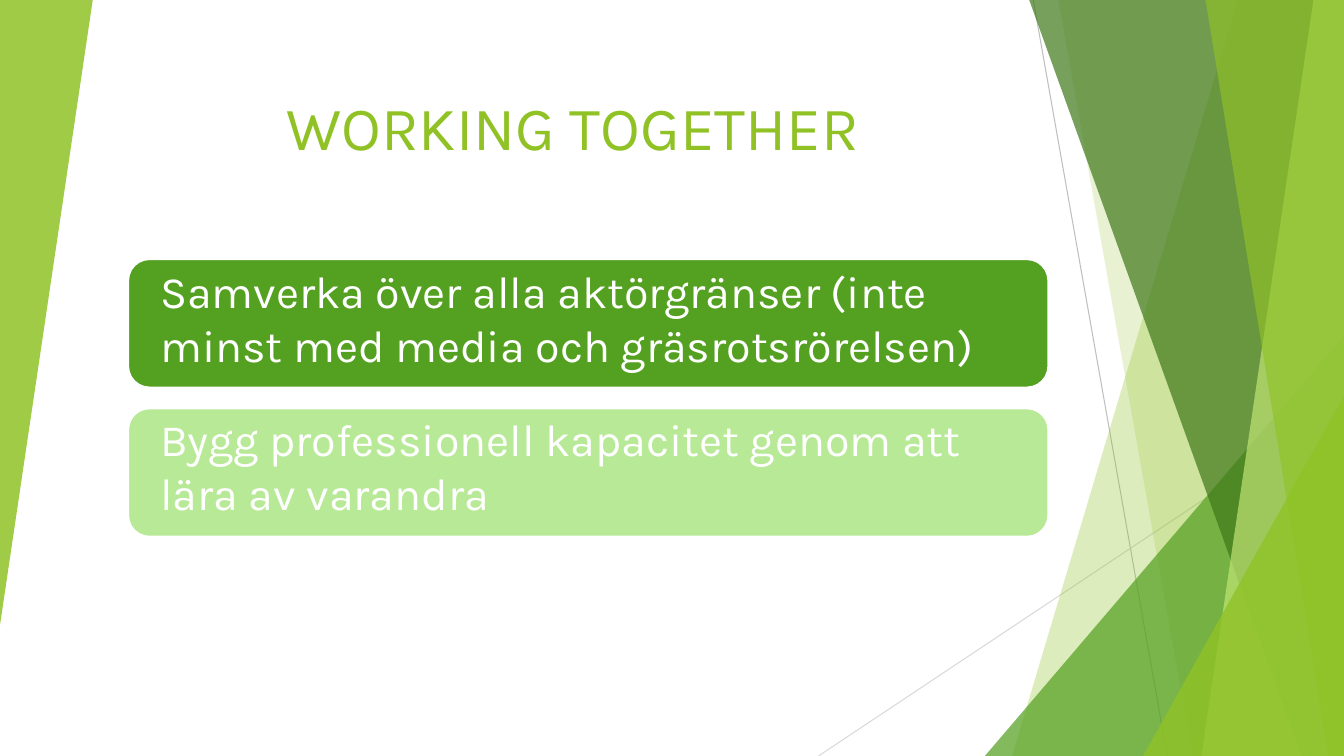
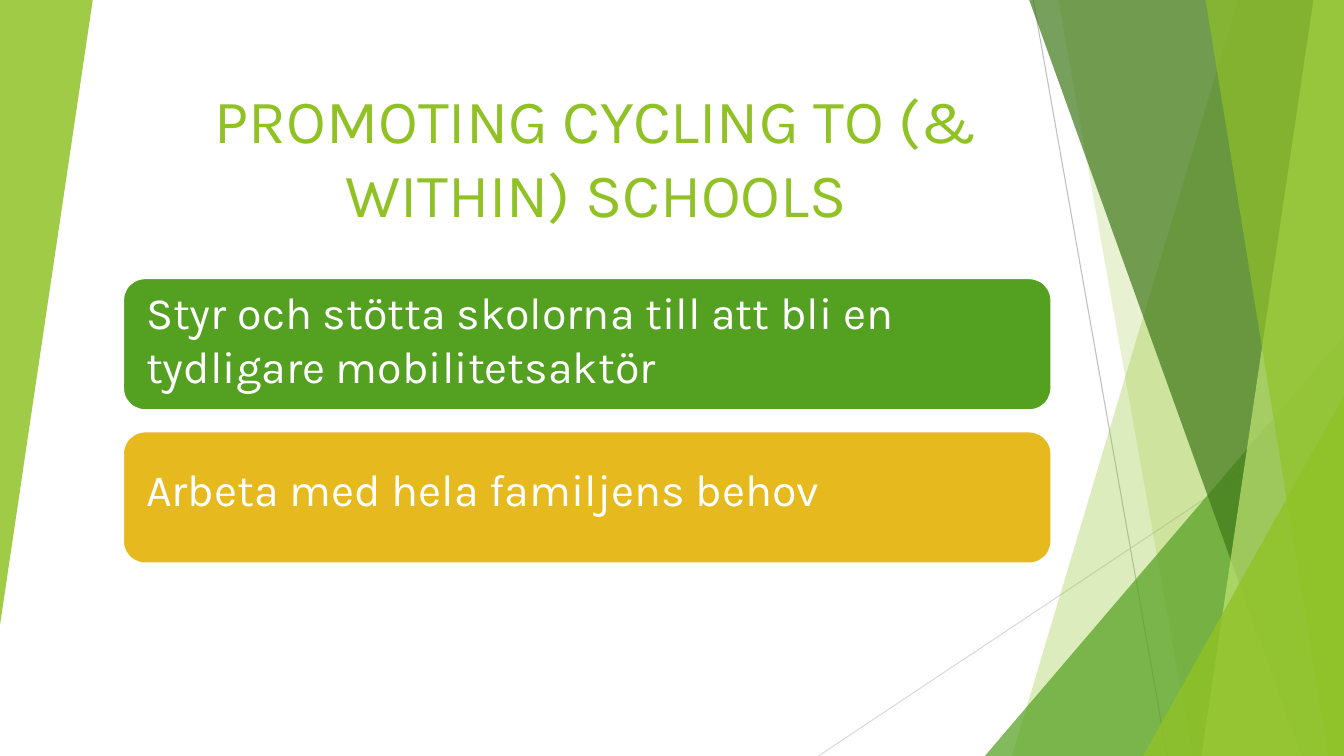
import dataclasses
import typing

import pptx
import pptx.dml.color
import pptx.enum.shapes
import pptx.enum.text
import pptx.oxml.ns
import pptx.oxml.xmlchemy
import pptx.util

SHAPE = pptx.enum.shapes.MSO_SHAPE
ANCHOR = pptx.enum.text.MSO_ANCHOR
ALIGN = pptx.enum.text.PP_ALIGN
WIDE = pptx.util.Inches(13.333)
HIGH = pptx.util.Inches(7.5)


@dataclasses.dataclass(frozen=True)
class Theme:
    font: str = "Karla"
    head: int = 44
    body: int = 32
    edge: float = 1.5
    hair: float = 0.75
    white: str = "FFFFFF"
    lime: str = "90C226"
    green: str = "54A021"
    dark: str = "3F7819"
    pale: str = "C0E474"
    mint: str = "B7E996"
    gold: str = "E6B91E"
    gray: str = "BFBFBF"
    mist: str = "D9D9D9"


THEME = Theme()


# Every length below is a percentage of the slide's width or height.
class Box(typing.NamedTuple):
    left: float
    top: float
    width: float
    height: float


class Ray(typing.NamedTuple):
    start: tuple[float, float]
    end: tuple[float, float]
    color: str


class Band(typing.NamedTuple):
    """Slanted left edge, filled out to the right side of the slide."""
    top: float
    foot: float
    color: str
    alpha: int


class Wedge(typing.NamedTuple):
    box: Box
    color: str
    alpha: int
    turn: int = 0


class Card(typing.NamedTuple):
    text: str
    color: str
    text_top: float


@dataclasses.dataclass(frozen=True)
class Page:
    title: str
    title_at: tuple[float, float]
    first: Box
    step: float
    text_left: float
    cards: tuple[Card, ...]


def corner(left: float, top: float) -> Box:
    """Box that reaches the lower right corner of the slide."""
    return Box(left, top, 100 - left, 100 - top)


TEXT_WIDTH = 63.68
TITLE_HIGH = 24
CARD_HIGH = 16

RAYS = (
    Ray((76.88, 0), (86.85, 100), THEME.gray),
    Ray((100, 53.73), (60.9, 100), THEME.mist),
)
FACETS = (
    Band(92.1, 75.3, THEME.lime, 30),
    Band(78.75, 88.73, THEME.lime, 20),
    Wedge(corner(73.28, 44.4), THEME.green, 72),
    Band(76.58, 96.83, THEME.dark, 70),
    Band(97.73, 89.4, THEME.pale, 70),
    Band(89.7, 98.85, THEME.lime, 65),
    Wedge(corner(85.05, 52.4), THEME.lime, 80),
    Wedge(Box(0, 0, 6.9, 82.67), THEME.lime, 85, turn=180),
)
PAGES = (
    Page(
        "WORKING TOGETHER", (10.8, -1.87),
        Box(9.53, 34.27, 68.48, 17), 19.73, 11.18,
        (
            Card("Samverka över alla aktörgränser (inte minst med media "
                 "och gräsrotsrörelsen)", THEME.green, 34.27),
            Card("Bygg professionell kapacitet genom att lära av varandra",
                 THEME.mint, 53.87),
        ),
    ),
    Page(
        "PROMOTING CYCLING TO (& WITHIN) SCHOOLS", (12.53, 7.07),
        Box(9.15, 36.8, 69.08, 17.47), 20.27, 10.13,
        (
            Card("Styr och stötta skolorna till att bli en tydligare "
                 "mobilitetsaktör", THEME.green, 37.07),
            Card("Arbeta med hela familjens behov", THEME.gold, 60.4),
        ),
    ),
)


def across(share: float) -> int:
    return round(WIDE * share / 100)


def down(share: float) -> int:
    return round(HIGH * share / 100)


def place(box: Box) -> tuple[int, int, int, int]:
    return (across(box.left), down(box.top),
            across(box.width), down(box.height))


def rgb(color: str) -> pptx.dml.color.RGBColor:
    return pptx.dml.color.RGBColor.from_string(color)


def paint(shape, color: str, alpha: int = 100, edge: str = "") -> None:
    shape.shadow.inherit = False
    shape.fill.solid()
    shape.fill.fore_color.rgb = rgb(color)
    if alpha < 100:
        tint = shape.element.spPr.find(".//" + pptx.oxml.ns.qn("a:srgbClr"))
        node = pptx.oxml.xmlchemy.OxmlElement("a:alpha")
        node.set("val", str(alpha * 1000))
        tint.append(node)
    if edge:
        shape.line.color.rgb = rgb(edge)
        shape.line.width = pptx.util.Pt(THEME.edge)
    else:
        shape.line.fill.background()


def write(slide, text: str, box: Box, *, size: int, color: str,
          align=ALIGN.LEFT, anchor=ANCHOR.TOP, before: int = 0) -> None:
    frame = slide.shapes.add_textbox(*place(box)).text_frame
    frame.word_wrap = True
    frame.vertical_anchor = anchor
    para = frame.paragraphs[0]
    para.alignment = align
    para.space_before = pptx.util.Pt(before)
    run = para.add_run()
    run.text = text
    run.font.name = THEME.font
    run.font.size = pptx.util.Pt(size)
    run.font.color.rgb = rgb(color)


def draw_ray(slide, ray: Ray) -> None:
    line = slide.shapes.add_connector(
        pptx.enum.shapes.MSO_CONNECTOR.STRAIGHT,
        across(ray.start[0]), down(ray.start[1]),
        across(ray.end[0]), down(ray.end[1]))
    line.line.color.rgb = rgb(ray.color)
    line.line.width = pptx.util.Pt(THEME.hair)
    line.element.spPr.append(pptx.oxml.xmlchemy.OxmlElement("a:effectLst"))


def draw_facet(slide, facet: Band | Wedge) -> None:
    if isinstance(facet, Band):
        path = slide.shapes.build_freeform(across(facet.top), 0)
        path.add_line_segments(
            [(WIDE, 0), (WIDE, HIGH), (across(facet.foot), HIGH)], close=True)
        shape = path.convert_to_shape()
    else:
        shape = slide.shapes.add_shape(
            SHAPE.ISOSCELES_TRIANGLE, *place(facet.box))
        shape.adjustments[0] = 1
        shape.rotation = facet.turn
    paint(shape, facet.color, facet.alpha)


def draw_page(slide, page: Page) -> None:
    for ray in RAYS:
        draw_ray(slide, ray)
    for facet in FACETS:
        draw_facet(slide, facet)
    write(slide, page.title, Box(*page.title_at, TEXT_WIDTH, TITLE_HIGH),
          size=THEME.head, color=THEME.lime,
          align=ALIGN.CENTER, anchor=ANCHOR.BOTTOM)
    for row, card in enumerate(page.cards):
        box = page.first._replace(top=page.first.top + row * page.step)
        shape = slide.shapes.add_shape(SHAPE.ROUNDED_RECTANGLE, *place(box))
        paint(shape, card.color, edge=THEME.white)
        write(slide, card.text,
              Box(page.text_left, card.text_top, TEXT_WIDTH, CARD_HIGH),
              size=THEME.body, color=THEME.white, before=10)


def main() -> None:
    deck = pptx.Presentation()
    deck.slide_width, deck.slide_height = WIDE, HIGH
    blank = deck.slide_layouts[6]
    for page in PAGES:
        draw_page(deck.slides.add_slide(blank), page)
    deck.save("out.pptx")


if __name__ == "__main__":
    main()
